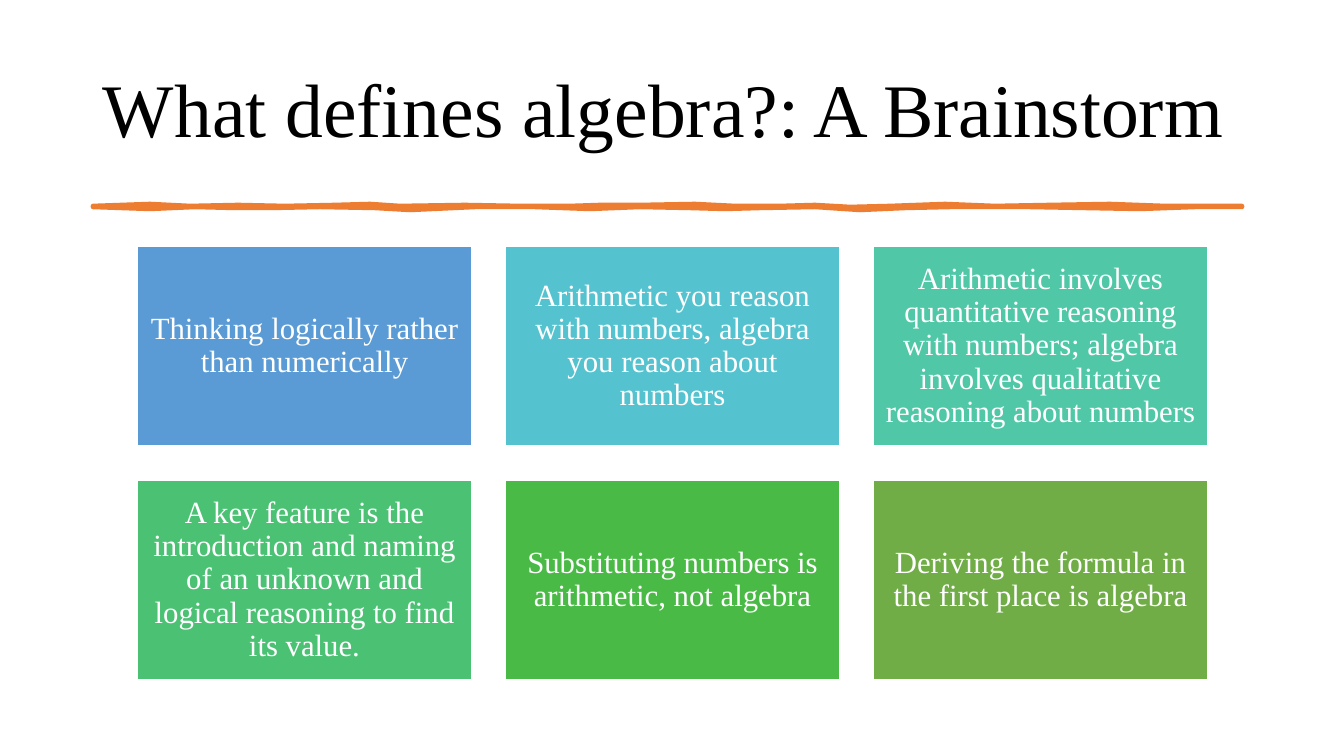
from dataclasses import dataclass
from typing import Any

from pptx import Presentation
from pptx.dml.color import RGBColor
from pptx.enum.shapes import MSO_SHAPE
from pptx.enum.text import MSO_ANCHOR, PP_ALIGN
from pptx.util import Pt

PX = 914400 / 100.8
FONT = "Times New Roman"
BLACK = RGBColor(0x00, 0x00, 0x00)
WHITE = RGBColor(0xFF, 0xFF, 0xFF)
ORANGE = RGBColor(0xED, 0x7D, 0x31)
BLUE = RGBColor(0x5B, 0x9B, 0xD5)
CYAN = RGBColor(0x55, 0xC3, 0xCF)
TEAL = RGBColor(0x50, 0xC8, 0xA7)
MINT = RGBColor(0x4B, 0xC1, 0x74)
GREEN = RGBColor(0x4A, 0xBA, 0x46)
OLIVE = RGBColor(0x70, 0xAD, 0x47)

COLUMNS = 3
IDEA_LEFT, IDEA_TOP = 137, 246
IDEA_WIDTH, IDEA_HEIGHT = 335, 200
COLUMN_STEP, ROW_STEP = 368, 234

STROKE_TOP = [
    (93, 206), (150, 204), (190, 206), (238, 205), (285, 206), (335, 205),
    (370, 204), (400, 206), (465, 205), (520, 206), (570, 206), (600, 205),
    (640, 205), (695, 204), (735, 206), (780, 206), (815, 205), (850, 207),
    (890, 206), (945, 204), (995, 206), (1050, 205), (1110, 204),
    (1165, 206), (1205, 206), (1242, 206),
]
STROKE_BOTTOM = [
    (1242, 207), (1195, 207), (1140, 209), (1085, 208), (1030, 207),
    (950, 207), (905, 208), (860, 210), (815, 207), (760, 208), (725, 209),
    (690, 208), (640, 207), (590, 209), (535, 207), (475, 207), (410, 210),
    (375, 208), (320, 207), (270, 208), (235, 208), (195, 207), (150, 209),
    (93, 207),
]


@dataclass(frozen=True)
class Idea:
    text: str
    color: RGBColor


IDEAS = [
    Idea("Thinking logically rather than numerically", BLUE),
    Idea("Arithmetic you reason with numbers, algebra you reason about numbers", CYAN),
    Idea(
        "Arithmetic involves quantitative reasoning with numbers; "
        "algebra involves qualitative reasoning about numbers",
        TEAL,
    ),
    Idea(
        "A key feature is the introduction and naming of an unknown "
        "and logical reasoning to find its value.",
        MINT,
    ),
    Idea("Substituting numbers is arithmetic, not algebra", GREEN),
    Idea("Deriving the formula in the first place is algebra", OLIVE),
]


def px(length: int) -> int:
    return round(length * PX)


def apply_format(target: Any, values: dict[str, Any]) -> None:
    for name, value in values.items():
        setattr(target, name, value)


def write_text(
    shape: Any, text: str, size: int, color: RGBColor, align: PP_ALIGN, inset: int
) -> None:
    frame = shape.text_frame
    sides = ("left", "top", "right", "bottom")
    margins = {f"margin_{side}": px(inset) for side in sides}
    apply_format(
        frame,
        {"word_wrap": True, "vertical_anchor": MSO_ANCHOR.MIDDLE, **margins},
    )
    paragraph = frame.paragraphs[0]
    apply_format(paragraph, {"text": text, "alignment": align, "line_spacing": 0.9})
    font = paragraph.runs[0].font
    apply_format(font, {"name": FONT, "size": Pt(size)})
    font.color.rgb = color


def paint(shape: Any, fill: RGBColor, line: RGBColor, width: float) -> None:
    shape.shadow.inherit = False
    shape.fill.solid()
    shape.fill.fore_color.rgb = fill
    shape.line.color.rgb = line
    shape.line.width = Pt(width)


def draw_title(slide: Any) -> None:
    title = slide.shapes.add_textbox(px(93), px(40), px(1159), px(146))
    write_text(
        title, "What defines algebra?: A Brainstorm", 54, BLACK, PP_ALIGN.LEFT, 10
    )


def draw_brush_stroke(slide: Any) -> None:
    start, *outline = STROKE_TOP + STROKE_BOTTOM
    builder = slide.shapes.build_freeform(*start, scale=PX)
    builder.add_line_segments(outline, close=True)
    paint(builder.convert_to_shape(), ORANGE, ORANGE, 3.25)


def draw_idea(slide: Any, index: int, idea: Idea) -> None:
    row, column = divmod(index, COLUMNS)
    card = slide.shapes.add_shape(
        MSO_SHAPE.RECTANGLE,
        px(IDEA_LEFT + column * COLUMN_STEP),
        px(IDEA_TOP + row * ROW_STEP),
        px(IDEA_WIDTH),
        px(IDEA_HEIGHT),
    )
    paint(card, idea.color, WHITE, 1)
    write_text(card, idea.text, 22, WHITE, PP_ALIGN.CENTER, 9)


def main() -> None:
    deck = Presentation()
    apply_format(deck, {"slide_width": px(1344), "slide_height": px(756)})
    slide = deck.slides.add_slide(deck.slide_layouts[6])
    draw_title(slide)
    draw_brush_stroke(slide)
    for index, idea in enumerate(IDEAS):
        draw_idea(slide, index, idea)
    deck.save("out.pptx")


if __name__ == "__main__":
    main()
